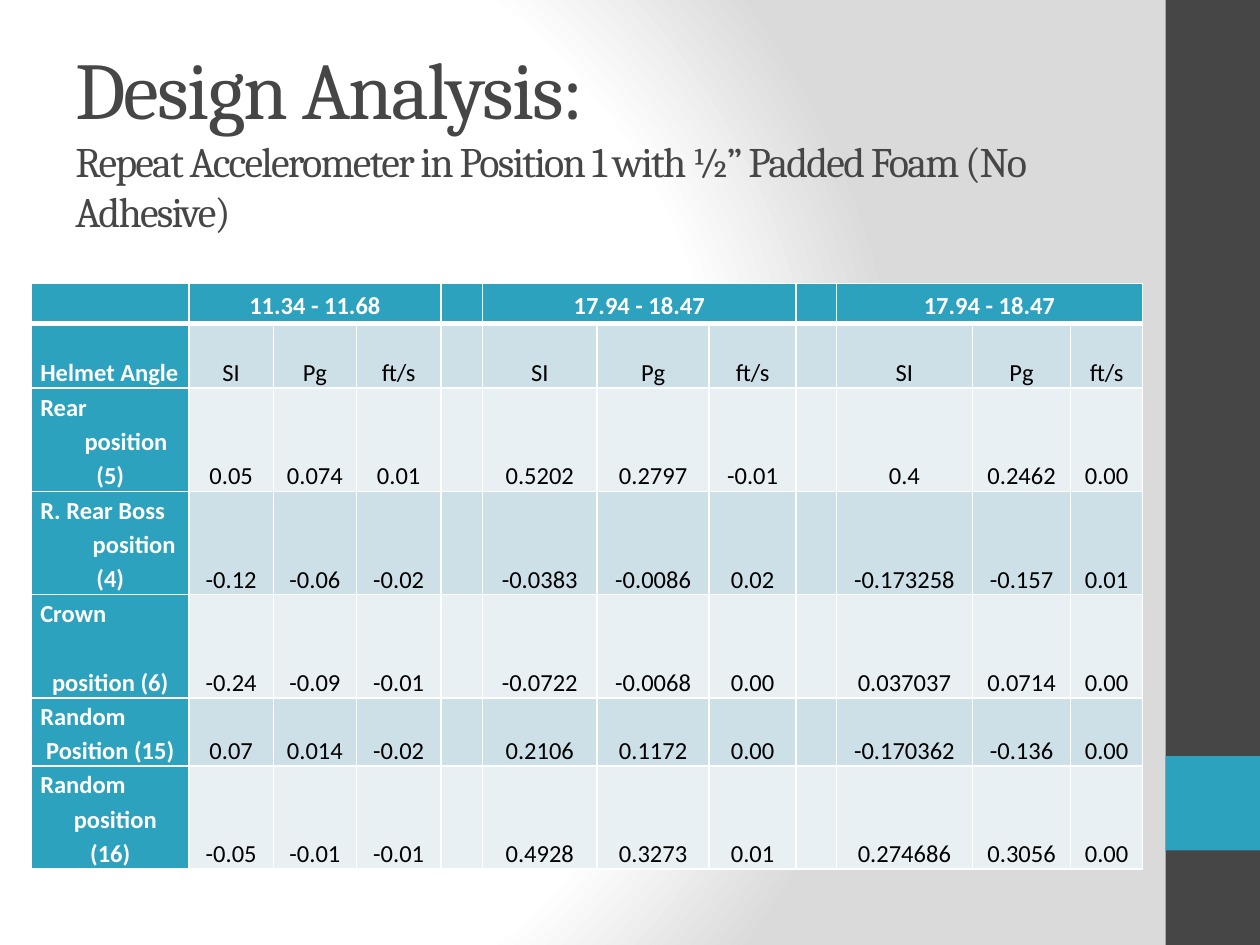
"""Build the design analysis slide with its helmet accelerometer table."""
from dataclasses import dataclass

from lxml import etree
from pptx import Presentation
from pptx import util as u
from pptx.dml.color import RGBColor
from pptx.enum import shapes, text
from pptx.oxml.ns import qn

COLOURS = {
    "dark": "464646", "accent": "2DA2BF", "white": "FFFFFF", "black": "000000",
    "edge": "DADADA", "band": "CDE0E8", "pale": "E8F0F4",
}
LEFT, CENTRE = text.PP_ALIGN.LEFT, text.PP_ALIGN.CENTER
MIDDLE, BOTTOM = text.MSO_ANCHOR.MIDDLE, text.MSO_ANCHOR.BOTTOM
COLUMN_WIDTHS = (1.25, 0.67, 0.66, 0.67, 0.33, 0.91, 0.89, 0.69, 0.32, 1.08, 0.78, 0.57)
GROUP_STARTS = (1, 5, 9)
SPEEDS = ("11.34 - 11.68", "17.94 - 18.47", "17.94 - 18.47")
MEASURES = ("SI", "Pg", "ft/s")


@dataclass(frozen=True)
class Panel:
    """A plain rectangle of the side bar."""
    top: float
    height: float
    colour: str


@dataclass(frozen=True)
class Line:
    """One paragraph of a cell, with its indent and the space above it."""
    words: str
    align: text.PP_ALIGN = CENTRE
    indent: float = 0
    before: float = 0


@dataclass(frozen=True)
class Row:
    """A body row of the table."""
    height: float
    label: tuple[Line, ...]
    values: tuple[str, ...]
    anchor: text.MSO_ANCHOR = MIDDLE


PANELS = (Panel(0, 7.5, "dark"), Panel(6, 0.75, "accent"))
ROWS = (
    Row(0.51, (Line("Helmet Angle", LEFT),), MEASURES * 3, BOTTOM),
    Row(0.82, (Line("Rear", LEFT), Line("position", indent=0.25), Line("(5)")),
        ("0.05", "0.074", "0.01", "0.5202", "0.2797", "-0.01", "0.4", "0.2462", "0.00")),
    Row(0.82, (Line("R. Rear Boss", LEFT), Line("position", indent=0.38), Line("(4)")),
        ("-0.12", "-0.06", "-0.02", "-0.0383", "-0.0086", "0.02",
         "-0.173258", "-0.157", "0.01")),
    Row(0.82, (Line("Crown", LEFT), Line("position (6)", before=0.27)),
        ("-0.24", "-0.09", "-0.01", "-0.0722", "-0.0068", "0.00",
         "0.037037", "0.0714", "0.00")),
    Row(0.54, (Line("Random", LEFT), Line("Position (15)")),
        ("0.07", "0.014", "-0.02", "0.2106", "0.1172", "0.00",
         "-0.170362", "-0.136", "0.00")),
    Row(0.82, (Line("Random", LEFT), Line("position", indent=0.08), Line("(16)")),
        ("-0.05", "-0.01", "-0.01", "0.4928", "0.3273", "0.01",
         "0.274686", "0.3056", "0.00")),
)


def rgb(name: str) -> RGBColor:
    """Look up a named colour."""
    return RGBColor.from_string(COLOURS[name])


def apply(target: object, formats: dict) -> None:
    """Set every format value on the target."""
    for name, value in formats.items():
        setattr(target, name, value)


def add_colour(parent, name: str) -> None:
    """Append a colour element."""
    etree.SubElement(parent, qn("a:srgbClr"), val=COLOURS[name])


def paint_background(page) -> None:
    """Give the page its radial gradient."""
    page.background.fill.gradient()
    gradient = page.element.find(".//" + qn("a:gradFill"))
    for child in list(gradient):
        gradient.remove(child)
    stops = etree.SubElement(gradient, qn("a:gsLst"))
    for percent, name in ((0, "white"), (75, "white"), (100, "edge")):
        add_colour(etree.SubElement(stops, qn("a:gs"), pos=str(percent * 1000)), name)
    shade = etree.SubElement(gradient, qn("a:path"), {"path": "circle"})
    etree.SubElement(shade, qn("a:fillToRect"), l="20000", t="50000", r="100000", b="50000")


def add_panel(page, panel: Panel) -> None:
    """Draw one part of the side bar."""
    shape = page.shapes.add_shape(
        shapes.MSO_SHAPE.RECTANGLE, u.Inches(9.25), u.Inches(panel.top),
        u.Inches(0.75), u.Inches(panel.height))
    shape.shadow.inherit = False
    shape.fill.solid()
    shape.fill.fore_color.rgb = rgb(panel.colour)
    shape.line.fill.background()


def add_title(page) -> None:
    """Write the heading and its smaller second part."""
    box = page.shapes.add_textbox(u.Inches(0.5), u.Inches(0.67), u.Inches(8.33), u.Inches(1.25))
    frame = box.text_frame
    apply(frame, {"word_wrap": True, "vertical_anchor": MIDDLE, "margin_bottom": u.Inches(0.46)})
    para = frame.paragraphs[0]
    heading = (("Design Analysis:", 46),
               ("Repeat Accelerometer in Position 1 with ½” Padded Foam (No Adhesive)", 24))
    for index, (words, size) in enumerate(heading):
        if index:
            para.add_line_break()
        span = para.add_run()
        span.text = words
        apply(span.font, {"name": "Cambria", "size": u.Pt(size)})
        span.font.color.rgb = rgb("dark")
        span.font._element.set("spc", "-100")


def add_borders(cell, top: float, bottom: float) -> None:
    """Outline a cell in white."""
    properties = cell._tc.get_or_add_tcPr()
    for side, width in {"L": 1, "R": 1, "T": top, "B": bottom}.items():
        line = etree.SubElement(properties, qn("a:ln" + side), w=str(u.Pt(width)))
        add_colour(etree.SubElement(line, qn("a:solidFill")), "white")


def fill_cell(cell, lines: tuple[Line, ...], colour: str, anchor: text.MSO_ANCHOR,
              strong: bool) -> None:
    """Fill a cell and write its lines."""
    cell.fill.solid()
    cell.fill.fore_color.rgb = rgb(colour)
    apply(cell, {"vertical_anchor": anchor, "margin_left": u.Inches(0.07),
                 "margin_right": u.Inches(0.07), "margin_top": 0, "margin_bottom": 0})
    frame = cell.text_frame
    if not lines:
        etree.SubElement(frame.paragraphs[0]._p, qn("a:endParaRPr"), sz="1400")
    for index, line in enumerate(lines):
        para = frame.add_paragraph() if index else frame.paragraphs[0]
        apply(para, {"alignment": line.align, "line_spacing": 1.15,
                     "space_before": u.Inches(line.before)})
        para._p.get_or_add_pPr().set("marL", str(u.Inches(line.indent)))
        span = para.add_run()
        span.text = line.words
        apply(span.font, {"name": "Calibri", "size": u.Pt(14), "bold": strong})
        span.font.color.rgb = rgb("white" if strong else "black")


def add_results(page) -> None:
    """Draw the table of accelerometer results."""
    heights = (0.32, *(row.height for row in ROWS))
    table = page.shapes.add_table(
        len(heights), len(COLUMN_WIDTHS), u.Inches(0.25), u.Inches(2.25),
        u.Inches(sum(COLUMN_WIDTHS)), u.Inches(sum(heights))).table
    apply(table, {"first_row": False, "horz_banding": False})
    for column, width in zip(table.columns, COLUMN_WIDTHS):
        column.width = u.Inches(width)
    for table_row, height in zip(table.rows, heights):
        table_row.height = u.Inches(height)
    for index in range(len(heights)):
        for cell in table.rows[index].cells:
            add_borders(cell, 3 if index == 1 else 1, 3 if index == 0 else 1)

    speeds = dict(zip(GROUP_STARTS, SPEEDS))
    for column in range(len(COLUMN_WIDTHS)):
        lines = (Line(speeds[column]),) if column in speeds else ()
        fill_cell(table.cell(0, column), lines, "accent", MIDDLE, True)
    for start in GROUP_STARTS:
        table.cell(0, start).merge(table.cell(0, start + 2))

    value_columns = [start + step for start in GROUP_STARTS for step in range(3)]
    for index, row in enumerate(ROWS, 1):
        fill_cell(table.cell(index, 0), row.label, "accent", row.anchor, True)
        values = dict(zip(value_columns, row.values))
        for column in range(1, len(COLUMN_WIDTHS)):
            lines = (Line(values[column]),) if column in values else ()
            fill_cell(table.cell(index, column), lines, "band" if index % 2 else "pale",
                      BOTTOM, False)


def main() -> None:
    """Assemble and save the deck."""
    deck = Presentation()
    apply(deck, {"slide_width": u.Inches(10), "slide_height": u.Inches(7.5)})
    page = deck.slides.add_slide(deck.slide_layouts[6])
    paint_background(page)
    for panel in PANELS:
        add_panel(page, panel)
    add_title(page)
    add_results(page)
    deck.save("out.pptx")


if __name__ == "__main__":
    main()
